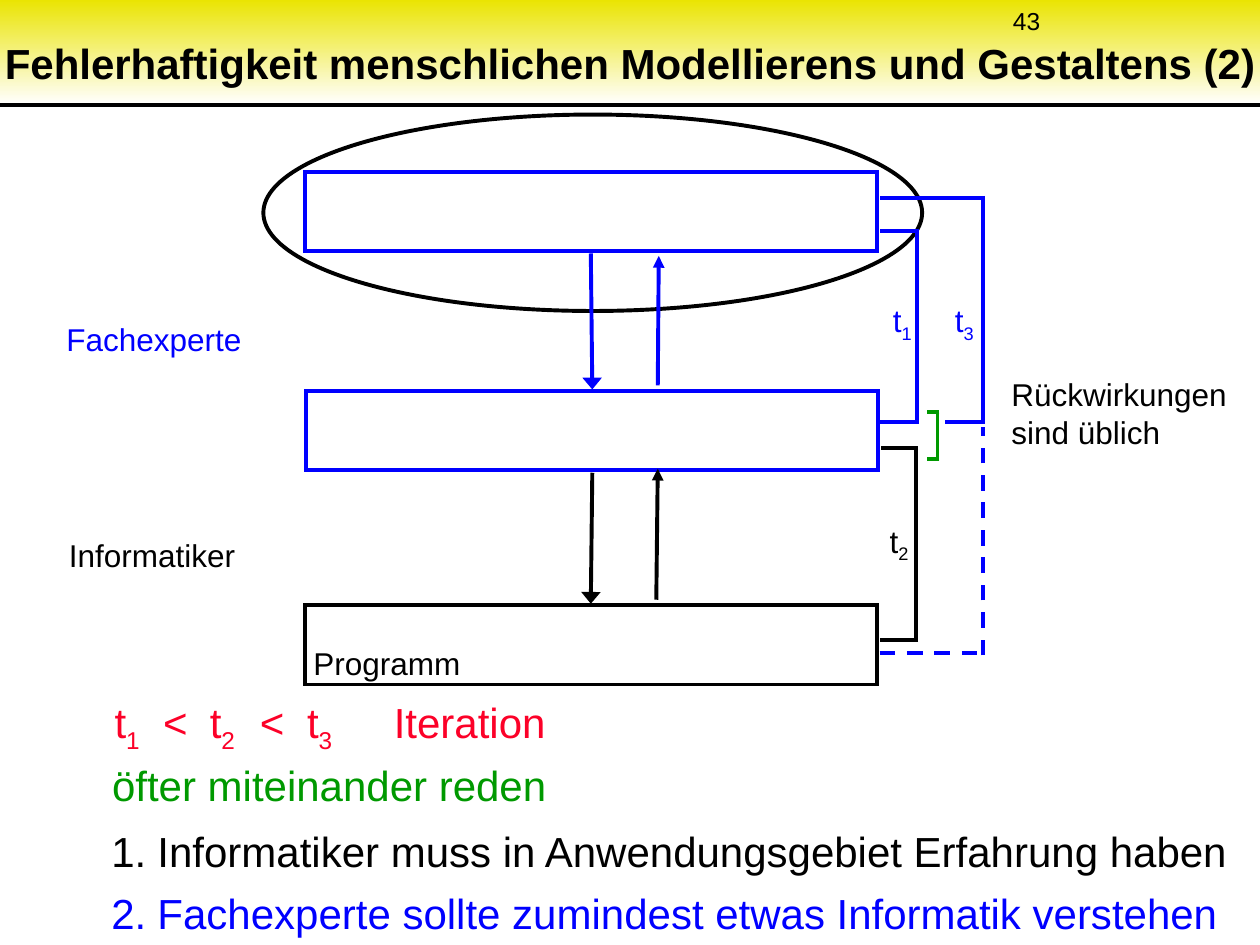
from lxml import etree
from pptx import Presentation
from pptx import util as u
from pptx.dml.color import RGBColor
from pptx.enum import dml, shapes, text
from pptx.oxml import ns

COLORS = {"black": "000000", "blue": "0000FF", "green": "009900",
          "red": "FC0128", "yellow": "EAE402", "white": "FFFFFF"}
FONT = "Arial"
LINE_WIDTH = u.Pt(2.25)
CORNER = 0.04  # overlap that closes bracket corners, in cm


def rgb(color):
    return RGBColor.from_string(COLORS[color])


def sub(parent, tag, **attrs):
    return etree.SubElement(parent, ns.qn(tag), attrs)


def add_run(p, txt, size, color, bold=False, base=0):
    r = p.add_run()
    r.text = txt
    r.font.name, r.font.size, r.font.bold = FONT, u.Pt(size), bold
    r.font.color.rgb = rgb(color)
    if base:
        r.font._element.set("baseline", str(base))


def add_text(s, x, y, w, h, runs, size, color, wrap=False, tabs=(), align=None):
    """Add one paragraph; a run is a string or a (subscript,) tuple."""
    tf = s.shapes.add_textbox(u.Cm(x), u.Cm(y), u.Cm(w), u.Cm(h)).text_frame
    tf.word_wrap = wrap
    p = tf.paragraphs[0]
    if tabs:
        stops = sub(p._p.get_or_add_pPr(), "a:tabLst")
        for pos in tabs:
            sub(stops, "a:tab", pos=str(u.Cm(pos)), algn="l")
    p.alignment = align
    for run in runs:
        if isinstance(run, tuple):
            add_run(p, run[0], size, color, base=-25000)
        else:
            add_run(p, run, size, color)


def add_outline(s, kind, x, y, w, h, color):
    sp = s.shapes.add_shape(kind, u.Cm(x), u.Cm(y), u.Cm(w), u.Cm(h))
    sp.shadow.inherit = False
    sp.fill.background()
    sp.line.color.rgb = rgb(color)
    sp.line.width = LINE_WIDTH
    sub(sp.line._get_or_add_ln(), "a:miter", lim="800000")


def add_line(s, x1, y1, x2, y2, color, dashed=False, head=None):
    c = s.shapes.add_connector(shapes.MSO_CONNECTOR.STRAIGHT,
                               u.Cm(x1), u.Cm(y1), u.Cm(x2), u.Cm(y2))
    c.line.color.rgb = rgb(color)
    c.line.width = LINE_WIDTH
    if dashed:
        c.line.dash_style = dml.MSO_LINE.DASH
    if head:
        sub(c.line._get_or_add_ln(), "a:tailEnd", type="triangle", w=head, len="med")
    sub(c._element.spPr, "a:effectLst")


def add_bracket(s, x, top, bottom, left_top, left_bottom, color):
    add_line(s, x, top - CORNER, x, bottom + CORNER, color)
    add_line(s, x + CORNER, top, left_top, top, color)
    add_line(s, x + CORNER, bottom, left_bottom, bottom, color)


def add_header(s):
    band = s.shapes.add_shape(shapes.MSO_SHAPE.RECTANGLE, 0, 0, u.Cm(25.4), u.Cm(2.11))
    band.shadow.inherit = False
    band.line.fill.background()
    band.fill.gradient()
    band.fill.gradient_angle = 270
    for stop, color in zip(band.fill.gradient_stops, ("yellow", "white")):
        stop.color.rgb = rgb(color)
    # Keep the band behind the placeholders
    s.shapes._spTree.insert(2, band._element)
    add_line(s, 0, 2.11, 25.4, 2.11, "black")
    add_text(s, 20.17, 0, 5.28, 0.84, ["43"], 14, "black", wrap=True)


def place(sp, x, y, w, h):
    sp.left, sp.top, sp.width, sp.height = u.Cm(x), u.Cm(y), u.Cm(w), u.Cm(h)
    tf = sp.text_frame
    tf.auto_size = text.MSO_AUTO_SIZE.NONE
    return tf


def fill_title(s, txt):
    tf = place(s.shapes.title, -0.3, 0.41, 26.01, 1.7)
    tf.vertical_anchor = text.MSO_ANCHOR.MIDDLE
    p = tf.paragraphs[0]
    p.alignment = text.PP_ALIGN.CENTER
    add_run(p, txt, 24, "black", bold=True)


def fill_list(s, items):
    tf = place(s.placeholders[1], 1.99, 16.51, 23.2, 2.5)
    for i, (txt, color) in enumerate(items):
        p = tf.add_paragraph() if i else tf.paragraphs[0]
        pPr = p._p.get_or_add_pPr()
        pPr.set("marL", str(u.Cm(0.93)))
        pPr.set("indent", str(u.Cm(-0.93)))
        sub(pPr, "a:buFont", typeface=FONT)
        sub(pPr, "a:buAutoNum", type="arabicPeriod")
        p.space_before = u.Pt(6.8 if i else 0)
        add_run(p, txt, 24, color)


def main():
    prs = Presentation()
    prs.slide_width, prs.slide_height = u.Cm(25.4), u.Cm(19.05)
    s = prs.slides.add_slide(prs.slide_layouts[1])

    # Header
    add_header(s)
    fill_title(s, "Fehlerhaftigkeit menschlichen Modellierens und Gestaltens (2)")

    # Ellipse and the three stages
    add_outline(s, shapes.MSO_SHAPE.OVAL, 5.31, 2.31, 13.28, 3.96, "black")
    for x, y, color in ((6.15, 3.47, "blue"), (6.17, 7.88, "blue"), (6.15, 12.2, "black")):
        add_outline(s, shapes.MSO_SHAPE.RECTANGLE, x, y, 11.53, 1.6, color)

    # Arrows down and up between the stages
    for x1, y1, x2, y2, color, head in (
            (11.91, 5.11, 11.94, 7.85, "blue", "lg"),
            (11.94, 9.53, 11.91, 12.17, "black", "lg"),
            (13.26, 7.77, 13.28, 5.16, "blue", "med"),
            (13.23, 12.09, 13.26, 9.45, "black", "med")):
        add_line(s, x1, y1, x2, y2, color, head=head)

    # Time brackets on the right
    add_bracket(s, 18.49, 4.65, 8.51, 17.73, 17.73, "blue")
    add_bracket(s, 18.47, 9.04, 12.9, 17.75, 17.73, "black")
    add_bracket(s, 18.9, 8.31, 9.25, 18.69, 18.69, "green")
    add_bracket(s, 19.81, 3.99, 8.51, 17.73, 19.05, "blue")
    add_line(s, 17.73, 13.16, 19.81, 13.16, "blue", dashed=True)
    add_line(s, 19.81, 13.21, 19.81, 8.61, "blue", dashed=True)

    # Labels
    add_text(s, 1.09, 6.32, 4.5, 0.99, ["Fachexperte"], 18, "blue", wrap=True)
    add_text(s, 1.14, 10.69, 4.5, 0.99, ["Informatiker"], 18, "black", wrap=True)
    add_text(s, 6.07, 12.85, 4.5, 0.99, ["Programm"], 18, "black", wrap=True)
    add_text(s, 17.75, 5.94, 2.5, 0.99, ["t", ("1",), "\tt", ("3",)], 18, "blue",
             wrap=True, tabs=[1.25])
    add_text(s, 17.6, 10.39, 1.05, 0.99, ["t", ("2",)], 18, "black",
             wrap=True, align=text.PP_ALIGN.CENTER)
    add_text(s, 20.14, 7.44, 4.9, 1.75, ["Rückwirkungen sind üblich"], 18, "black",
             wrap=True)

    # Conclusions
    add_text(s, 2.06, 13.92, 10, 1.24,
             ["t", ("1",), "\t<\tt", ("2",), "\t<\tt", ("3",), "\tIteration"], 24, "red",
             wrap=True, tabs=[0.98, 1.92, 2.93, 3.88, 5.63])
    add_text(s, 2.01, 15.19, 10, 1.24, ["öfter miteinander reden"], 24, "green", wrap=True)
    fill_list(s, [
        ("Informatiker muss in Anwendungsgebiet Erfahrung haben", "black"),
        ("Fachexperte sollte zumindest etwas Informatik verstehen", "blue")])

    prs.save("out.pptx")


if __name__ == "__main__":
    main()
